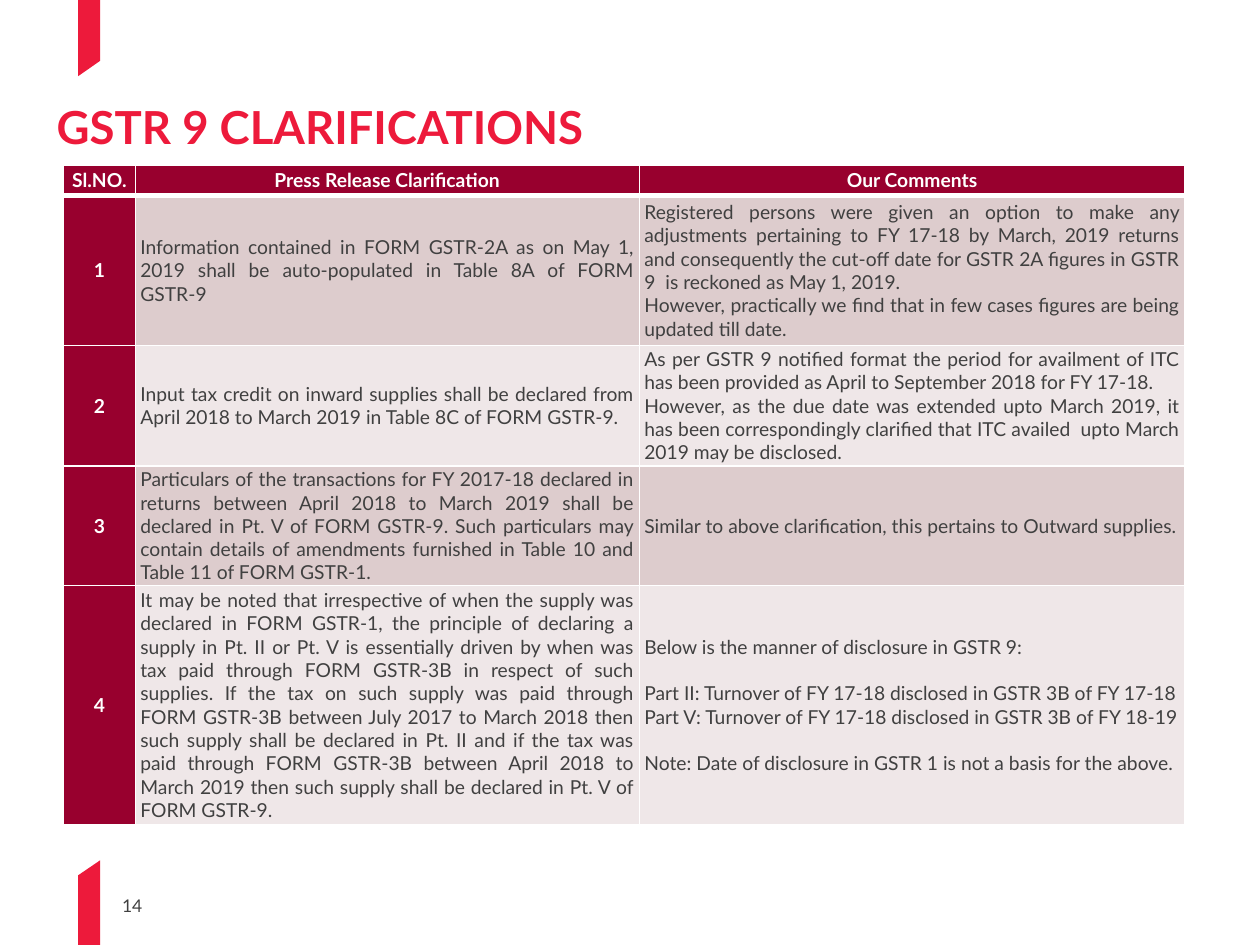
from dataclasses import dataclass

from lxml.etree import SubElement
from pptx import Presentation
from pptx.dml.color import RGBColor as Rgb
from pptx.enum.text import MSO_ANCHOR as Anchor, MSO_AUTO_SIZE as Fit, PP_ALIGN as Align
from pptx.oxml.ns import qn
from pptx.util import Pt


@dataclass(frozen=True)
class Theme:
    font: str = "Lato"
    red: str = "ED1A3B"
    wine: str = "98002E"
    odd: str = "DDCCCD"
    even: str = "EFE7E8"
    ink: str = "404040"
    white: str = "FFFFFF"
    title: float = 26
    body: float = 11
    small: float = 10


@dataclass(frozen=True)
class Line:
    text: str
    gap: bool = False  # one open line above


@dataclass(frozen=True)
class Row:
    high: float
    clause: str
    notes: tuple[Line, ...]


THEME = Theme()
HEADS = ("Sl.NO.", "Press Release Clarification", "Our Comments")
WIDTHS = (41, 288, 311.8)
HEAD_HIGH = 17.3
ROWS = (
    Row(85.7,
        "Information contained in FORM GSTR-2A as on May 1, 2019 shall be auto-populated "
        "in Table 8A of FORM GSTR-9",
        (Line("Registered persons were given an option to make any adjustments pertaining to "
              "FY 17-18 by March, 2019 returns and consequently the cut-off date for GSTR 2A "
              "figures in GSTR 9  is reckoned as May 1, 2019."),
         Line("However, practically we find that in few cases figures are being updated "
              "till date."))),
    Row(69,
        "Input tax credit on inward supplies shall be declared from April 2018 to March 2019 "
        "in Table 8C of FORM GSTR-9.",
        (Line("As per GSTR 9 notified format the period for availment of ITC has been provided "
              "as April to September 2018 for FY 17-18."),
         Line("However, as the due date was extended upto March 2019, it has been "
              "correspondingly clarified that ITC availed  upto March 2019 may be disclosed."))),
    Row(68.4,
        "Particulars of the transactions for FY 2017-18 declared in returns between April 2018 "
        "to March 2019 shall be declared in Pt. V of FORM GSTR-9. Such particulars may contain "
        "details of amendments furnished in Table 10 and Table 11 of FORM GSTR-1.",
        (Line("Similar to above clarification, this pertains to Outward supplies."),)),
    Row(136.4,
        "It may be noted that irrespective of when the supply was declared in FORM GSTR-1, the "
        "principle of declaring a supply in Pt. II or Pt. V is essentially driven by when was "
        "tax paid through FORM GSTR-3B in respect of such supplies. If the tax on such supply "
        "was paid through FORM GSTR-3B between July 2017 to March 2018 then such supply shall "
        "be declared in Pt. II and if the tax was paid through FORM GSTR-3B between April 2018 "
        "to March 2019 then such supply shall be declared in Pt. V of FORM GSTR-9.",
        (Line("Below is the manner of disclosure in GSTR 9:"),
         Line("Part II: Turnover of FY 17-18 disclosed in GSTR 3B of FY 17-18", True),
         Line("Part V: Turnover of FY 17-18 disclosed in GSTR 3B of FY 18-19"),
         Line("Note: Date of disclosure in GSTR 1 is not a basis for the above.", True))),
)


def style(para, size: float, color: str, bold: bool = False) -> None:
    for run in para.runs:
        font = run.font
        font.name, font.size, font.bold = THEME.font, Pt(size), bold
        font.color.rgb = Rgb.from_string(color)


def draw_mark(slide, points: tuple[tuple[float, float], ...]) -> None:
    first, *rest = [(Pt(x), Pt(y)) for x, y in points]
    build = slide.shapes.build_freeform(*first)
    build.add_line_segments(rest, close=True)
    mark = build.convert_to_shape()
    mark.shadow.inherit = False
    mark.fill.solid()
    mark.fill.fore_color.rgb = Rgb.from_string(THEME.red)
    mark.line.fill.background()


def draw_edges(cell, top: float, bottom: float) -> None:
    props = cell._tc.get_or_add_tcPr()
    for side, width in (("L", 1), ("R", 1), ("T", top), ("B", bottom)):
        edge = SubElement(props, qn(f"a:ln{side}"), w=str(Pt(width)))
        fill = SubElement(edge, qn("a:solidFill"))
        SubElement(fill, qn("a:srgbClr"), val=THEME.white)


def fill_cell(cell, lines: tuple[Line, ...], back: str, label: bool,
              top: float = 1, bottom: float = 1) -> None:
    draw_edges(cell, top, bottom)
    cell.fill.solid()
    cell.fill.fore_color.rgb = Rgb.from_string(back)
    cell.margin_left = cell.margin_right = Pt(2.9)
    cell.margin_top = cell.margin_bottom = 0
    cell.vertical_anchor = Anchor.MIDDLE
    frame = cell.text_frame
    frame.text = "\n".join(line.text for line in lines)
    for para, line in zip(frame.paragraphs, lines):
        para.alignment = Align.CENTER if label else Align.JUSTIFY
        if line.gap:
            para.space_before = Pt(THEME.body * 1.2)
        style(para, THEME.body, THEME.white if label else THEME.ink, label)


def draw_title(slide) -> None:
    title = slide.shapes.title
    title.left, title.top, title.width, title.height = Pt(25.2), Pt(59), Pt(666.7), Pt(25.2)
    frame = title.text_frame
    frame.text = "GSTR 9 CLARIFICATIONS"
    frame.auto_size, frame.vertical_anchor = Fit.NONE, Anchor.TOP
    para = frame.paragraphs[0]
    para.alignment, para.line_spacing = Align.LEFT, 0.8
    style(para, THEME.title, THEME.red, True)


def draw_number(slide) -> None:
    box = slide.shapes.add_textbox(Pt(69.8), Pt(511.2), Pt(32.4), Pt(12.2))
    frame = box.text_frame
    frame.margin_left = frame.margin_right = frame.margin_top = frame.margin_bottom = 0
    frame.word_wrap, frame.vertical_anchor = True, Anchor.BOTTOM
    frame.text = "14"
    style(frame.paragraphs[0], THEME.small, THEME.ink)


def draw_table(slide) -> None:
    highs = (HEAD_HIGH, *(row.high for row in ROWS))
    table = slide.shapes.add_table(len(highs), len(WIDTHS), Pt(36.3), Pt(94.3),
                                   Pt(sum(WIDTHS)), Pt(sum(highs))).table
    for col, width in zip(table.columns, WIDTHS):
        col.width = Pt(width)
    for band, high in zip(table.rows, highs):
        band.height = Pt(high)
    # Header row
    for col, head in enumerate(HEADS):
        fill_cell(table.cell(0, col), (Line(head),), THEME.wine, True, bottom=3)
    # Numbered rows in two tints
    for num, row in enumerate(ROWS, 1):
        tint = THEME.odd if num % 2 else THEME.even
        top = 3 if num == 1 else 1
        fill_cell(table.cell(num, 0), (Line(str(num)),), THEME.wine, True, top)
        fill_cell(table.cell(num, 1), (Line(row.clause),), tint, False, top)
        fill_cell(table.cell(num, 2), row.notes, tint, False, top)


def main() -> None:
    deck = Presentation()
    deck.slide_width, deck.slide_height = Pt(720), Pt(540)
    slide = deck.slides.add_slide(deck.slide_layouts[5])
    # Slanted marks at the bottom and top edges
    left, right = 44.6, 57.2
    draw_mark(slide, ((left, 500.2), (left, 540), (right, 540), (right, 491.6)))
    draw_mark(slide, ((left, 0), (left, 43.6), (right, 34.8), (right, 0)))
    draw_number(slide)
    draw_title(slide)
    draw_table(slide)
    deck.save("out.pptx")


if __name__ == "__main__":
    main()
